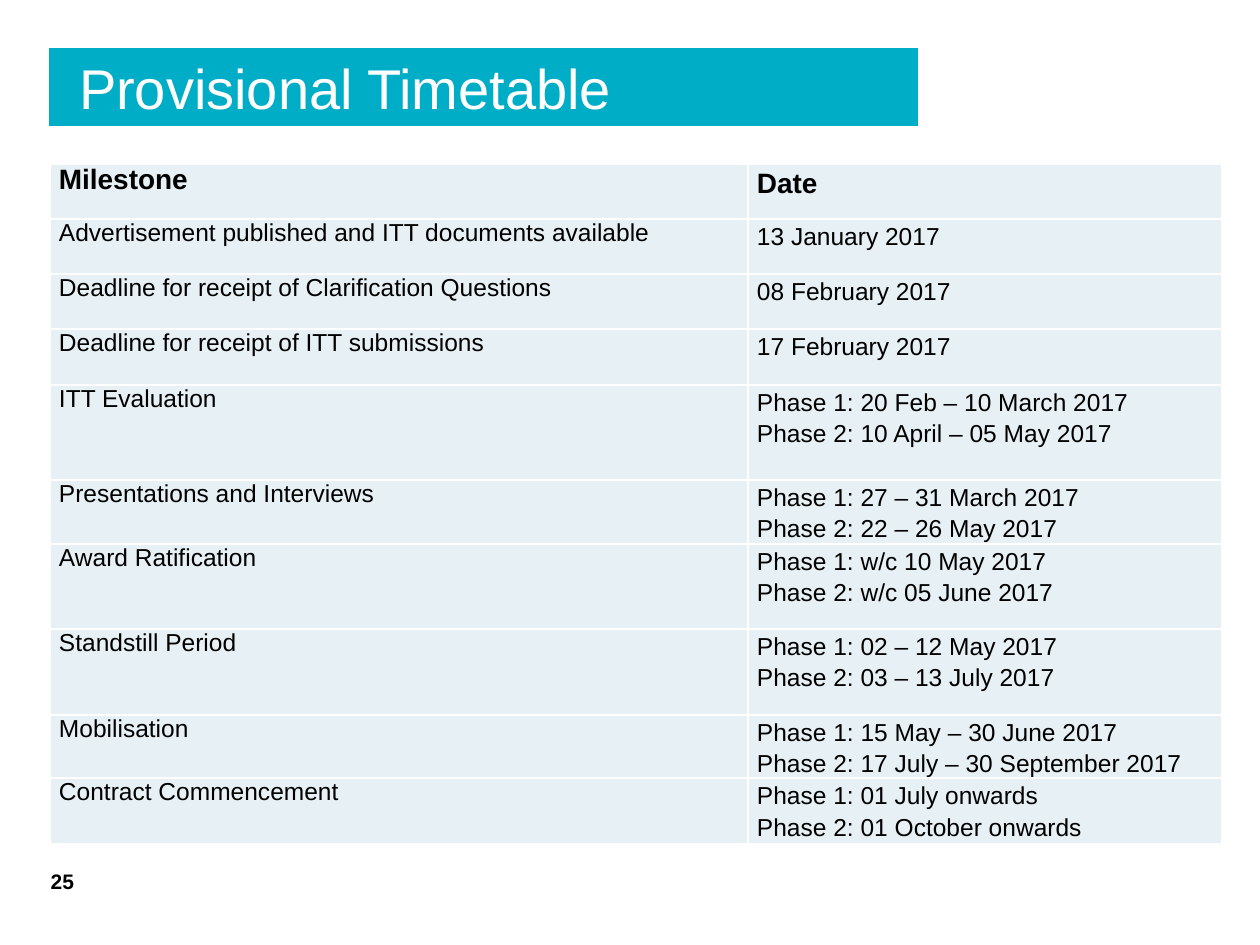
from dataclasses import dataclass

from lxml.etree import SubElement
from pptx import Presentation
from pptx.dml.color import RGBColor
from pptx.enum.text import MSO_ANCHOR, MSO_AUTO_SIZE, PP_ALIGN
from pptx.oxml.ns import qn
from pptx.util import Emu, Pt

TITLE = "Provisional Timetable"
PAGE_NUMBER = "25"

# milestone, date lines, row height in px
ROWS = [
    ("Milestone", ["Date"], 55),
    ("Advertisement published and ITT documents available", ["13 January 2017"], 55),
    ("Deadline for receipt of Clarification Questions", ["08 February 2017"], 55),
    ("Deadline for receipt of ITT submissions", ["17 February 2017"], 56),
    ("ITT Evaluation",
     ["Phase 1: 20 Feb – 10 March 2017", "Phase 2: 10 April – 05 May 2017"], 95),
    ("Presentations and Interviews",
     ["Phase 1: 27 – 31 March 2017", "Phase 2: 22 – 26 May 2017"], 64),
    ("Award Ratification",
     ["Phase 1: w/c 10 May 2017", "Phase 2: w/c 05 June 2017"], 85),
    ("Standstill Period",
     ["Phase 1: 02 – 12 May 2017", "Phase 2: 03 – 13 July 2017"], 86),
    ("Mobilisation",
     ["Phase 1: 15 May – 30 June 2017", "Phase 2: 17 July – 30 September 2017"], 63),
    ("Contract Commencement",
     ["Phase 1: 01 July onwards", "Phase 2: 01 October onwards"], 66),
]
COLUMNS = [698, 474]


@dataclass(frozen=True)
class Theme:
    font: str = "Arial"
    banner: str = "00ADC6"
    cell: str = "E7F1F5"
    white: str = "FFFFFF"
    black: str = "000000"
    title_size: int = 32
    header_size: int = 16
    body_size: int = 14
    number_size: int = 12


THEME = Theme()


def px(n):
    return Emu(round(n * 914400 / 126))


def set_fill(target, color):
    target.fill.solid()
    target.fill.fore_color.rgb = RGBColor.from_string(color)


def set_font(p, size, color=THEME.black, bold=False):
    p.font.name = THEME.font
    p.font.size = Pt(size)
    p.font.bold = bold
    p.font.color.rgb = RGBColor.from_string(color)


def set_margins(frame, left=0, right=0):
    frame.margin_left, frame.margin_right = px(left), px(right)
    frame.margin_top = frame.margin_bottom = 0


def set_borders(cell):
    tc_pr = cell._tc.get_or_add_tcPr()
    for side in ("lnL", "lnR", "lnT", "lnB"):
        ln = SubElement(tc_pr, qn(f"a:{side}"), w=str(Pt(1)))
        solid = SubElement(ln, qn("a:solidFill"))
        SubElement(solid, qn("a:srgbClr"), val=THEME.white)


def add_title(slide):
    sp = slide.shapes.title
    sp.left, sp.top, sp.width, sp.height = map(px, (49, 48, 869, 78))
    set_fill(sp, THEME.banner)
    tf = sp.text_frame
    tf.text = TITLE
    tf.auto_size = MSO_AUTO_SIZE.NONE
    tf.vertical_anchor = MSO_ANCHOR.MIDDLE
    set_margins(tf, left=30)
    p = tf.paragraphs[0]
    p.alignment = PP_ALIGN.LEFT
    set_font(p, THEME.title_size, THEME.white)


def fill_cell(cell, lines, header, **spacing):
    cell.text = "\n".join(lines)
    set_margins(cell, 9, 9)
    set_borders(cell)
    set_fill(cell, THEME.cell)
    for p in cell.text_frame.paragraphs:
        for name, value in spacing.items():
            setattr(p, name, value)
        set_font(p, THEME.header_size if header else THEME.body_size, bold=header)


def add_timetable(slide):
    height = sum(row[2] for row in ROWS)
    table = slide.shapes.add_table(
        len(ROWS), len(COLUMNS), px(50), px(164), px(sum(COLUMNS)), px(height)).table
    table.horz_banding = False
    for column, width in zip(table.columns, COLUMNS):
        column.width = px(width)
    for i, (milestone, dates, row_height) in enumerate(ROWS):
        table.rows[i].height = px(row_height)
        fill_cell(table.cell(i, 0), [milestone], i == 0, space_after=Pt(6))
        fill_cell(table.cell(i, 1), dates, i == 0, line_spacing=1.15)


def add_page_number(slide):
    tf = slide.shapes.add_textbox(*map(px, (33, 869, 41, 25))).text_frame
    tf.text = PAGE_NUMBER
    tf.word_wrap = True
    tf.vertical_anchor = MSO_ANCHOR.BOTTOM
    set_margins(tf)
    p = tf.paragraphs[0]
    p.alignment = PP_ALIGN.RIGHT
    set_font(p, THEME.number_size, bold=True)


def main():
    prs = Presentation()
    prs.slide_width, prs.slide_height = px(1260), px(945)
    slide = prs.slides.add_slide(prs.slide_layouts[5])
    add_title(slide)
    add_timetable(slide)
    add_page_number(slide)
    prs.save("out.pptx")


if __name__ == "__main__":
    main()
